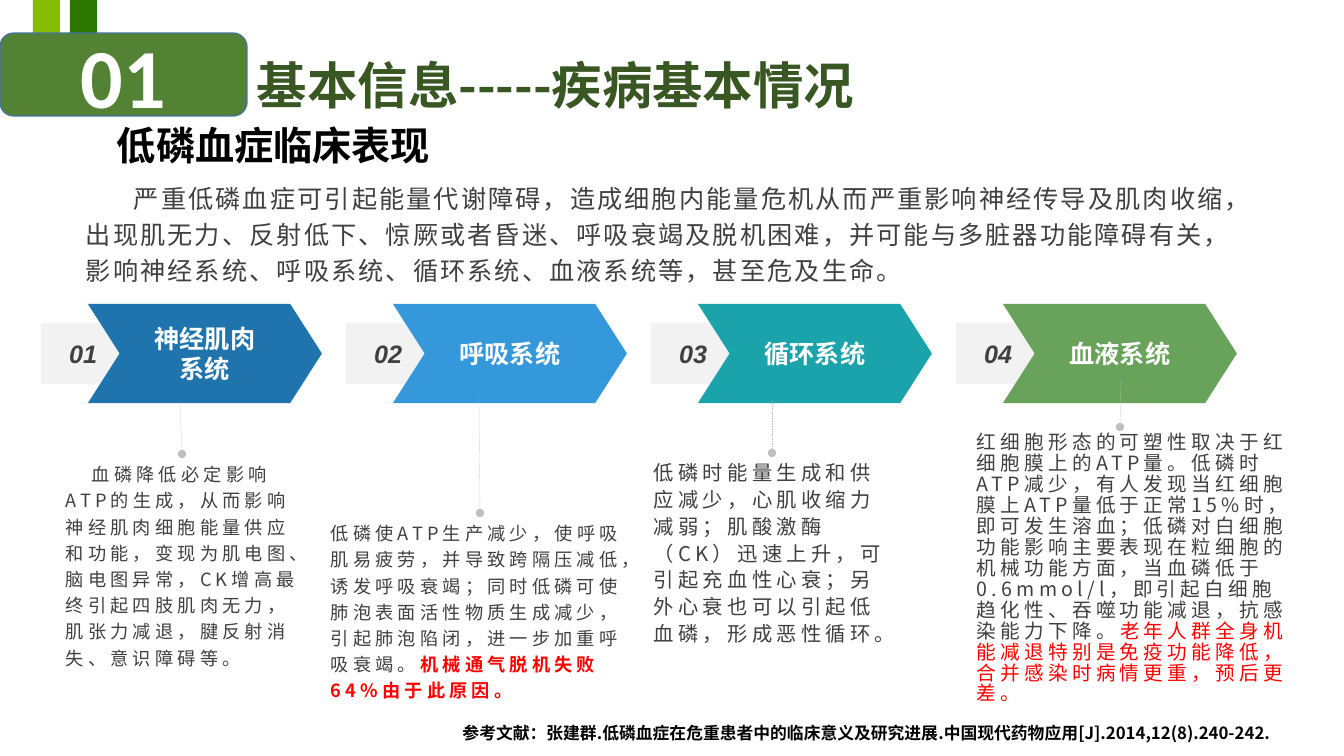
from pptx import Presentation, util as u
from pptx.dml.color import RGBColor
from pptx.enum import dml, shapes, text
from pptx.oxml.ns import qn
from lxml import etree

PX = 914400 / 100.8
SANS = "Noto Sans CJK SC"
COLORS = {
    "lime": "86BD00", "forest": "2C7700", "badge": "548235", "badge_edge": "43739E",
    "title": "385723", "black": "000000", "white": "FFFFFF", "body": "404040",
    "alert": "FF0000", "plate": "F2F2F2", "leader": "BFBFBF",
    "navy": "1F74AD", "sky": "3498DB", "teal": "1AA3AA", "green": "69A35B",
}
SHAPE = shapes.MSO_SHAPE
ALIGN = text.PP_ALIGN

# label lines, arrow colour, leader top, body box, body style, body runs
SYSTEMS = [
    (["神经肌肉", "系统"], "navy", (180, 402), 182, (56, 454, 258, 213),
     dict(size=13, leading=1.2, indent=26),
     [("血磷降低必定影响ATP的生成，从而影响神经肌肉细胞能量供应和功能，变现为肌电图、脑电图异常，CK增高最终引起四肢肌肉无力，肌张力减退，腱反射消失、意识障碍等。", {})]),
    (["呼吸系统"], "sky", (479, 398), 480, (321, 513, 318, 183),
     dict(size=13, leading=1.2),
     [("低磷使ATP生产减少，使呼吸肌易疲劳，并导致跨隔压减低，诱发呼吸衰竭；同时低磷可使肺泡表面活性物质生成减少，引起肺泡陷闭，进一步加重呼吸衰竭。", {}),
      ("机械通气脱机失败64%由于此原因。", dict(color="alert", bold=True))]),
    (["循环系统"], "teal", (772, 401), 772, (644, 453, 256, 215),
     dict(size=14.5, leading=1.1),
     [("低磷时能量生成和供应减少，心肌收缩力减弱；肌酸激酶（CK）迅速上升，可引起充血性心衰；另外心衰也可以引起低血磷，形成恶性循环。", {})]),
    (["血液系统"], "green", (1121, 380), 1120, (967, 427, 343, 321),
     dict(size=14, leading=u.Pt(15)),
     [("红细胞形态的可塑性取决于红细胞膜上的ATP量。低磷时ATP减少，有人发现当红细胞膜上ATP量低于正常15%时，即可发生溶血；低磷对白细胞功能影响主要表现在粒细胞的机械功能方面，当血磷低于0.6mmol/l，即引起白细胞趋化性、吞噬功能减退，抗感染能力下降。", {}),
      ("老年人群全身机能减退特别是免疫功能降低，合并感染时病情更重，预后更差。", dict(color="alert"))]),
]


def emu(*lengths):
    return [u.Emu(round(length * PX)) for length in lengths]


def rgb(name):
    return RGBColor.from_string(COLORS[name])


def add_run(paragraph, words, size, color="body", bold=False, italic=False, font=SANS, spacing=0):
    run = paragraph.add_run()
    run.text = words
    run.font.size = u.Pt(size)
    run.font.bold = bold
    run.font.italic = italic
    run.font.color.rgb = rgb(color)
    run.font.name = font
    props = run._r.get_or_add_rPr()
    if spacing:
        props.set("spc", str(int(spacing * 100)))
    etree.SubElement(props, qn("a:ea")).set("typeface", font)


def add_block(slide, box, fill, preset=SHAPE.RECTANGLE, adjust=()):
    block = slide.shapes.add_shape(preset, *emu(*box))
    block.shadow.inherit = False
    block.fill.solid()
    block.fill.fore_color.rgb = rgb(fill)
    block.line.fill.background()
    for i, value in enumerate(adjust):
        block.adjustments[i] = value
    return block


def label(block, lines, size, **style):
    """Centre lines of text, one paragraph each, in a shape."""
    frame = block.text_frame
    frame.word_wrap = True
    frame.vertical_anchor = text.MSO_ANCHOR.MIDDLE
    for i, line in enumerate(lines):
        paragraph = frame.add_paragraph() if i else frame.paragraphs[0]
        paragraph.alignment = ALIGN.CENTER
        add_run(paragraph, line, size, **style)


def add_copy(slide, box, runs, size, leading=1.0, indent=0, align=ALIGN.LEFT,
             top=5, bottom=5, **style):
    """Add one paragraph of wrapped text; each run may override the style."""
    area = slide.shapes.add_textbox(*emu(*box))
    frame = area.text_frame
    frame.word_wrap = True
    frame.margin_top, frame.margin_bottom = emu(top, bottom)
    paragraph = frame.paragraphs[0]
    paragraph.alignment = align
    paragraph.line_spacing = leading
    if indent:
        props = paragraph._p.get_or_add_pPr()
        props.set("marL", "0")
        props.set("indent", str(emu(indent)[0]))
    for words, changes in runs:
        add_run(paragraph, words, size, **{**style, **changes})
    return area


def add_leader(slide, start, end):
    leader = slide.shapes.add_connector(shapes.MSO_CONNECTOR.STRAIGHT, *emu(*start, *end))
    leader.line.color.rgb = rgb("leader")
    leader.line.width = u.Pt(0.25)
    leader.line.dash_style = dml.MSO_LINE.DASH
    etree.SubElement(leader.line._get_or_add_ln(), qn("a:tailEnd")).set("type", "oval")
    etree.SubElement(leader._element.spPr, qn("a:effectLst"))
    return leader


def add_header(slide, left, top):
    add_block(slide, (left + 70, top, 27, 77), "forest")
    add_block(slide, (left + 33, top, 27, 50), "lime")
    badge = add_block(slide, (left, top + 33, 247, 83), "badge", SHAPE.FLOWCHART_ALTERNATE_PROCESS)
    badge.line.color.rgb = rgb("badge_edge")
    badge.line.width = u.Pt(1)
    label(badge, ["01"], 60, color="white", bold=True, font="Calibri")
    add_copy(slide, (left + 247, top + 49, 895, 72), [("基本信息-----疾病基本情况", {})],
             36, color="title", bold=True)
    add_copy(slide, (left + 107, top + 116, 334, 60), [("低磷血症临床表现", {})],
             28, color="black", bold=True)


def add_intro(slide, box):
    add_copy(slide, box, [(
        "严重低磷血症可引起能量代谢障碍，造成细胞内能量危机从而严重影响神经传导及肌肉收缩，出现肌无力、反射低下、惊厥或者昏迷、呼吸衰竭及脱机困难，并可能与多脏器功能障碍有关，影响神经系统、呼吸系统、循环系统、血液系统等，甚至危及生命。", {})],
        18, leading=1.2, indent=48, top=0, spacing=1.5)


def add_system(slide, left, top, number, system):
    """Add a numbered arrow with its explanation hanging from a leader."""
    lines, color, start, dot_x, box, style, runs = system
    plate = add_block(slide, (left, top + 19, 94, 61), "plate", SHAPE.PENTAGON, [0.32])
    label(plate, [f"{number:02}"], 18, color="body", bold=True, italic=True, font="Arial")
    arrow = add_block(slide, (left + 47, top, 234, 99), color, SHAPE.NOTCHED_RIGHT_ARROW, [1, 0.32])
    label(arrow, lines, 18, color="white", bold=True)
    body = add_copy(slide, box, runs, bottom=0, spacing=3, **style)
    leader = add_leader(slide, start, (dot_x, box[1]))
    if dot_x == box[0] + box[2] / 2:
        leader.end_connect(body, 0)


def add_reference(slide, box):
    add_copy(slide, box, [(
        "参考文献：张建群.低磷血症在危重患者中的临床意义及研究进展.中国现代药物应用[J].2014,12(8).240-242.", {})],
        12, align=ALIGN.RIGHT, color="black", bold=True)


def main():
    deck = Presentation()
    deck.slide_width, deck.slide_height = emu(1344, 756)
    slide = deck.slides.add_slide(deck.slide_layouts[6])
    add_reference(slide, (64, 718, 1216, 30))
    for i, system in enumerate(SYSTEMS):
        add_system(slide, 41 + 305 * i, 304, i + 1, system)
    add_intro(slide, (76, 177, 1180, 127))
    add_header(slide, 0, 0)
    deck.save("out.pptx")


if __name__ == "__main__":
    main()
